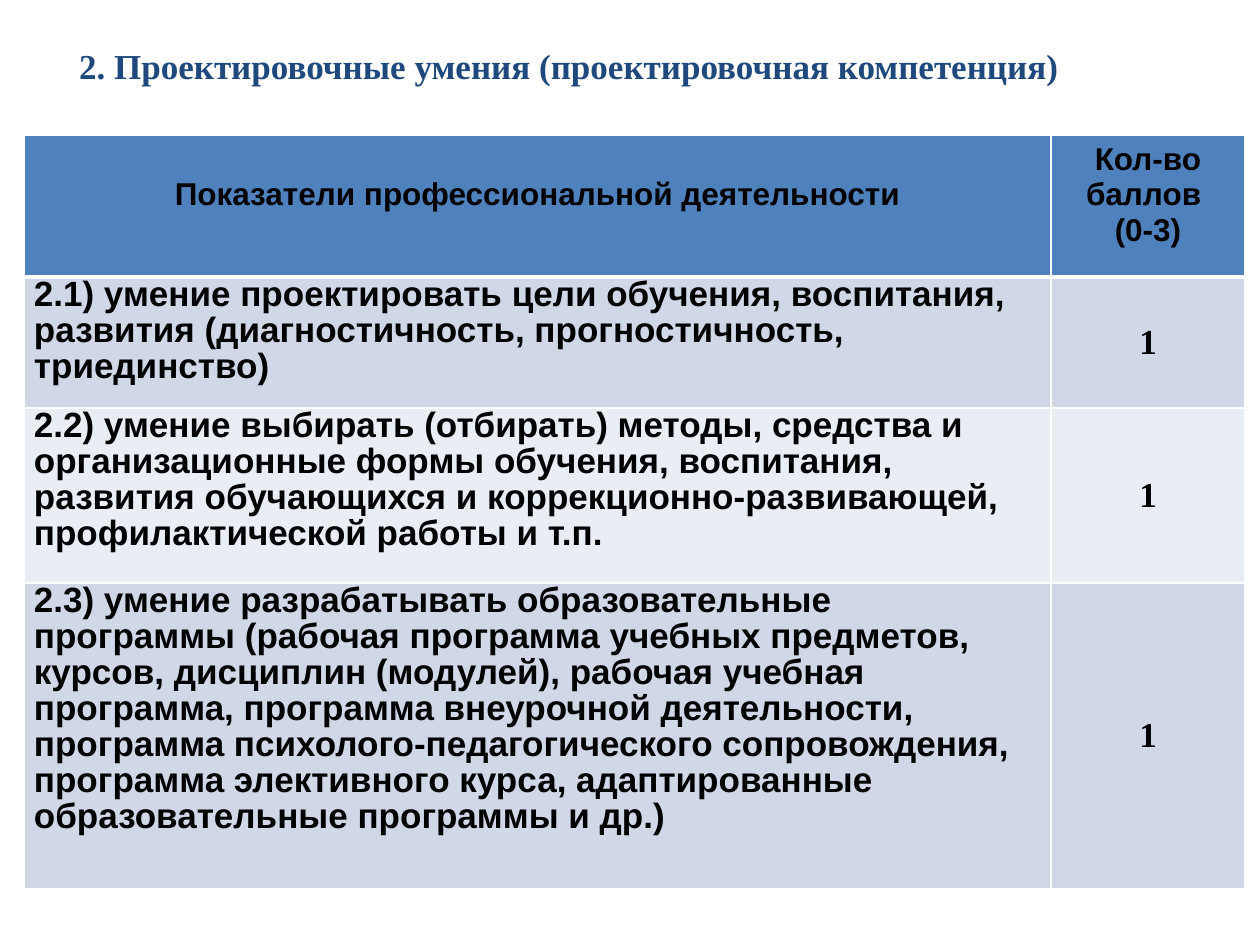
from lxml import etree
from pptx import Presentation
from pptx.dml.color import RGBColor
from pptx.enum.text import MSO_ANCHOR, PP_ALIGN
from pptx.oxml.ns import qn
from pptx.util import Emu, Pt

LEFT, CENTER = PP_ALIGN.LEFT, PP_ALIGN.CENTER
TOP, MIDDLE = MSO_ANCHOR.TOP, MSO_ANCHOR.MIDDLE
PX_PER_INCH = 126
TITLE_ONLY = 5
SANS, SERIF = "Arial", "Times New Roman"
HEADER_FILL, BANDS = "4F81BD", ("D0D8E8", "E9EDF4")
COLUMN_WIDTHS = (1027, 194)
ROW_HEIGHTS = (142, 131, 175, 306)

TITLE = "2. Проектировочные умения (проектировочная компетенция)"
INDICATOR_HEADING = "Показатели профессиональной деятельности"
SCORE_HEADING = "Кол-во баллов \n(0-3)"
SKILLS = (
    ("2.1) умение проектировать цели обучения, воспитания, развития "
     "(диагностичность, прогностичность, триединство)", "1"),
    ("2.2) умение выбирать (отбирать) методы, средства и организационные формы "
     "обучения, воспитания, развития обучающихся и коррекционно-развивающей, "
     "профилактической работы и т.п.", "1"),
    ("2.3) умение разрабатывать образовательные программы (рабочая программа "
     "учебных предметов, курсов, дисциплин (модулей), рабочая учебная программа, "
     "программа внеурочной деятельности, программа психолого-педагогического "
     "сопровождения, программа элективного курса, адаптированные образовательные "
     "программы и др.)", "1"),
)


def px(length):
    """Turn pixels into EMU."""
    return Emu(round(length * 914400 / PX_PER_INCH))


def rgb(color):
    """Turn a hex string into a colour."""
    return RGBColor.from_string(color)


def write(frame, text, size=20, font=SANS, color="000000", align=LEFT, spacing=None):
    """Fill a text frame with bold paragraphs, one for each line of text."""
    frame.text = text
    for paragraph in frame.paragraphs:
        paragraph.alignment = align
        paragraph.line_spacing = spacing
        for run in paragraph.runs:
            run.font.name = font
            run.font.size = Pt(size)
            run.font.bold = True
            run.font.color.rgb = rgb(color)


def style_cell(cell, fill, margins, anchor=TOP, bottom_line=1):
    """Give a cell its margins (left, top, right, bottom), white borders and fill."""
    (cell.margin_left, cell.margin_top,
     cell.margin_right, cell.margin_bottom) = map(px, margins)
    cell.vertical_anchor = anchor
    properties = cell._tc.get_or_add_tcPr()
    for edge, points in (("L", 1), ("R", 1), ("T", 1), ("B", bottom_line)):
        line = etree.SubElement(properties, qn(f"a:ln{edge}"), w=str(Pt(points)))
        paint = etree.SubElement(line, qn("a:solidFill"))
        etree.SubElement(paint, qn("a:srgbClr"), val="FFFFFF")
    cell.fill.solid()
    cell.fill.fore_color.rgb = rgb(fill)


def place_title(slide, left, top, width, height):
    """Place the heading in the title placeholder."""
    title = slide.shapes.title
    title.left, title.top, title.width, title.height = map(px, (left, top, width, height))
    frame = title.text_frame
    frame.word_wrap = True
    frame.vertical_anchor = MIDDLE
    frame.margin_left = px(16)
    frame.margin_bottom = px(48)
    write(frame, TITLE, font=SERIF, color="1F497D")


def place_scores(slide, left, top):
    """Place the table of skills and their scores."""
    table = slide.shapes.add_table(
        len(ROW_HEIGHTS), len(COLUMN_WIDTHS), px(left), px(top),
        px(sum(COLUMN_WIDTHS)), px(sum(ROW_HEIGHTS))).table
    for column, width in zip(table.columns, COLUMN_WIDTHS):
        column.width = px(width)
    for row, height in zip(table.rows, ROW_HEIGHTS):
        row.height = px(height)

    for column, (heading, inset) in enumerate(((INDICATOR_HEADING, 42), (SCORE_HEADING, 7))):
        cell = table.cell(0, column)
        write(cell.text_frame, heading, size=18, align=CENTER)
        style_cell(cell, HEADER_FILL, (13, inset, 13, 6), bottom_line=3)

    for row, (skill, score) in enumerate(SKILLS, start=1):
        band = BANDS[(row - 1) % len(BANDS)]
        skill_cell, score_cell = table.cell(row, 0), table.cell(row, 1)
        write(skill_cell.text_frame, skill, spacing=0.92)
        style_cell(skill_cell, band, (10, 1, 13, 0))
        write(score_cell.text_frame, score, font=SERIF, align=CENTER)
        style_cell(score_cell, band, (9, 0, 9, 0), anchor=MIDDLE)


def main():
    """Build the slide and save it."""
    deck = Presentation()
    deck.slide_width, deck.slide_height = px(1260), px(945)
    slide = deck.slides.add_slide(deck.slide_layouts[TITLE_ONLY])
    place_title(slide, 63, 38, 1134, 97)
    place_scores(slide, 24, 135)
    deck.save("out.pptx")


if __name__ == "__main__":
    main()
